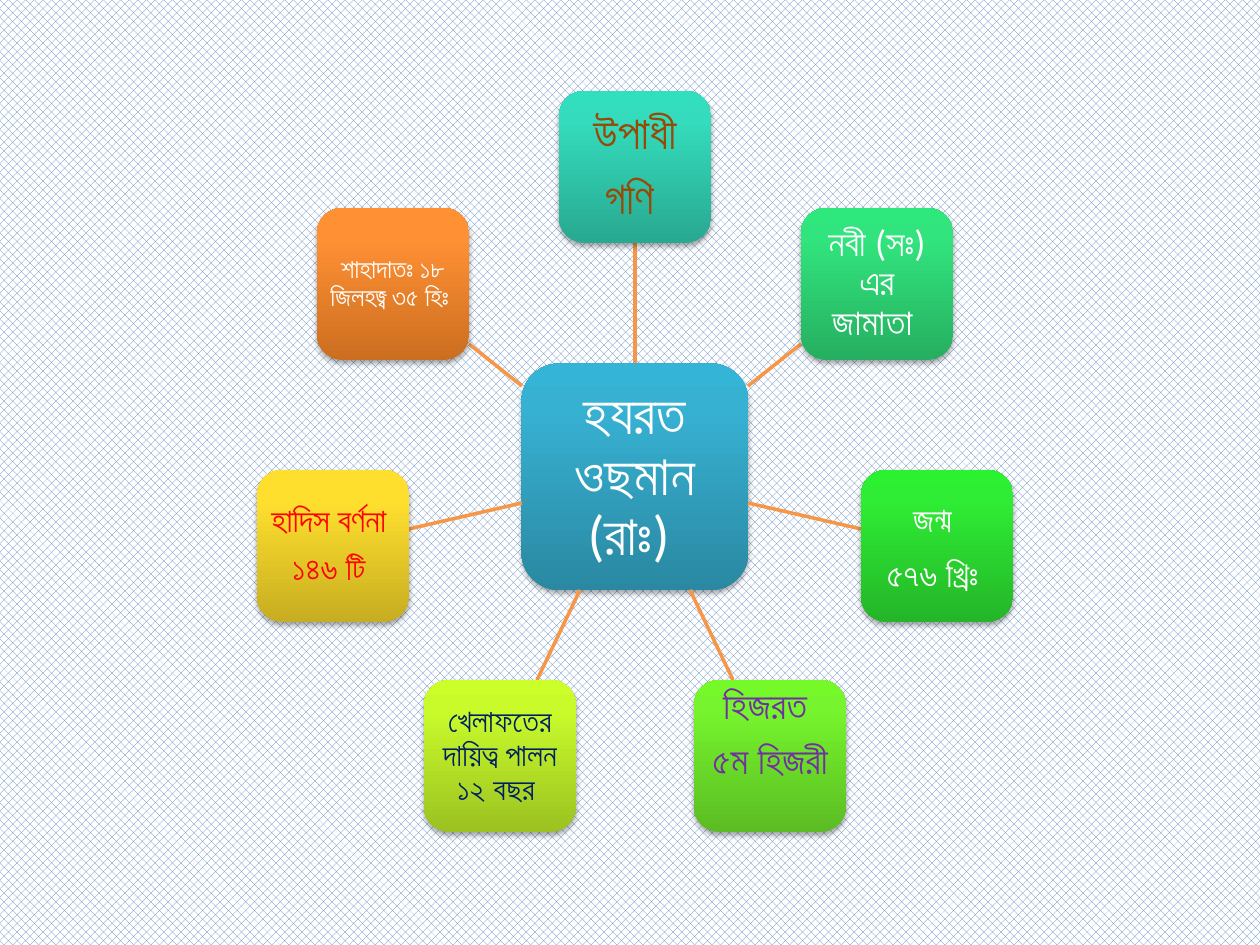
from copy import deepcopy
from math import cos, pi, sin
from typing import NamedTuple

from lxml import etree
from pptx import Presentation
from pptx.dml.color import RGBColor
from pptx.enum.dml import MSO_PATTERN
from pptx.enum.shapes import MSO_CONNECTOR, MSO_SHAPE
from pptx.enum.text import MSO_ANCHOR, PP_ALIGN
from pptx.oxml.ns import qn
from pptx.util import Pt

ROUNDED = MSO_SHAPE.ROUNDED_RECTANGLE
STRAIGHT = MSO_CONNECTOR.STRAIGHT
CENTER = PP_ALIGN.CENTER
MIDDLE = MSO_ANCHOR.MIDDLE
HALF_TONE = MSO_PATTERN.PERCENT_50
TOP_SIDE, BOTTOM_SIDE = 0, 2

WHITE = RGBColor(0xFF, 0xFF, 0xFF)
BLACK = RGBColor(0x00, 0x00, 0x00)
BLUE = RGBColor(0x4F, 0x81, 0xBD)
ORANGE = RGBColor(0xF7, 0x96, 0x46)
BROWN = RGBColor(0x98, 0x48, 0x07)
PURPLE = RGBColor(0x70, 0x30, 0xA0)
NAVY = RGBColor(0x00, 0x20, 0x60)
RED = RGBColor(0xFF, 0x00, 0x00)

SKY_SHADES = RGBColor(0x2A, 0x88, 0xA2), RGBColor(0x37, 0xB1, 0xD2), RGBColor(0x34, 0xB4, 0xD6)
TEAL_SHADES = RGBColor(0x28, 0xA9, 0x91), RGBColor(0x34, 0xDB, 0xBC), RGBColor(0x31, 0xDF, 0xBF)
MINT_SHADES = RGBColor(0x26, 0xAF, 0x60), RGBColor(0x31, 0xE4, 0x7D), RGBColor(0x2E, 0xE8, 0x7D)
GREEN_SHADES = RGBColor(0x24, 0xB6, 0x28), RGBColor(0x2F, 0xEC, 0x34), RGBColor(0x2B, 0xF1, 0x31)
LEAF_SHADES = RGBColor(0x5B, 0xBC, 0x23), RGBColor(0x76, 0xF4, 0x2D), RGBColor(0x75, 0xF9, 0x29)
LIME_SHADES = RGBColor(0x9B, 0xC2, 0x21), RGBColor(0xC9, 0xFB, 0x2B), RGBColor(0xCC, 0xFF, 0x29)
YELLOW_SHADES = RGBColor(0xC7, 0xAD, 0x21), RGBColor(0xFF, 0xDF, 0x2E), RGBColor(0xFF, 0xDF, 0x2F)
AMBER_SHADES = RGBColor(0xCC, 0x6E, 0x20), RGBColor(0xFF, 0x90, 0x34), RGBColor(0xFF, 0x91, 0x36)
SHADE_POSITIONS = 0, 0.8, 1

FONT = "Calibri"
PX_PER_INCH = 126
HUB_X, HUB_Y = 635, 477
HUB_SIZE, FACT_SIZE = 227, 152
RADIUS = 310


class Fact(NamedTuple):
    lines: list
    size: int
    color: RGBColor
    shades: tuple
    inset: int
    line_spacing: float = 0.9
    lift: int = 0


HUB = Fact(["হযরত ওছমান (রাঃ) "], 32, WHITE, SKY_SHADES, 11)
FACTS = [
    Fact(["উপাধী", "গণি "], 26, BROWN, TEAL_SHADES, 9),
    Fact(["নবী (সঃ) এর জামাতা "], 21, WHITE, MINT_SHADES, 8),
    Fact(["জন্ম ", "৫৭৬ খ্রিঃ "], 20, WHITE, GREEN_SHADES, 8, line_spacing=1.0),
    Fact(["হিজরত ", "৫ম হিজরী"], 22, PURPLE, LEAF_SHADES, 8, lift=42),
    Fact(["খেলাফতের দায়িত্ব পালন ১২ বছর "], 18, NAVY, LIME_SHADES, 6),
    Fact(["হাদিস বর্ণনা ", "১৪৬ টি "], 19, RED, YELLOW_SHADES, 6),
    Fact(["শাহাদাতঃ ১৮ জিলহজ্ব ৩৫ হিঃ "], 15, WHITE, AMBER_SHADES, 5),
]


def px(length):
    return round(length * 914400 / PX_PER_INCH)


def write_text(frame, lines, *, size, color, inset, line_spacing, lift):
    frame.word_wrap = True
    frame.vertical_anchor = MIDDLE
    frame.margin_left = frame.margin_right = frame.margin_top = px(inset)
    frame.margin_bottom = px(inset + lift)
    for index, line in enumerate(lines):
        paragraph = frame.add_paragraph() if index else frame.paragraphs[0]
        paragraph.alignment = CENTER
        paragraph.line_spacing = line_spacing
        paragraph.space_after = Pt(round(size * 0.35, 1))
        run = paragraph.add_run()
        run.text = line
        run.font.name = FONT
        run.font.size = Pt(size)
        run.font.color.rgb = color


def shade(tile, shades):
    tile.fill.gradient()
    tile.fill.gradient_angle = 90
    stop_list = tile.fill._xPr.find(qn("a:gradFill")).find(qn("a:gsLst"))
    stop_list.append(deepcopy(stop_list[-1]))
    for stop, position, color in zip(tile.fill.gradient_stops, SHADE_POSITIONS, shades):
        stop.position = position
        stop.color.rgb = color


def cast_shadow(tile):
    tile.shadow.inherit = False
    effects = tile._element.spPr.find(qn("a:effectLst"))
    shadow = etree.SubElement(effects, qn("a:outerShdw"), blurRad=str(Pt(3.1)),
                              dist=str(Pt(1.8)), dir="5400000", rotWithShape="0")
    tint = etree.SubElement(shadow, qn("a:srgbClr"), val=str(BLACK))
    etree.SubElement(tint, qn("a:alpha"), val="35000")


def add_tile(slide, fact, center_x, center_y, side):
    tile = slide.shapes.add_shape(ROUNDED, px(center_x - side / 2), px(center_y - side / 2),
                                  px(side), px(side))
    shade(tile, fact.shades)
    tile.line.fill.background()
    cast_shadow(tile)
    write_text(tile.text_frame, fact.lines, size=fact.size, color=fact.color,
               inset=fact.inset, line_spacing=fact.line_spacing, lift=fact.lift)
    return tile


def add_spoke(slide, start, end):
    spoke = slide.shapes.add_connector(STRAIGHT, *map(px, start + end))
    spoke.line.color.rgb = ORANGE
    spoke.line.width = Pt(2)
    etree.SubElement(spoke._element.spPr, qn("a:effectLst"))
    return spoke


def add_radial(slide):
    hub = add_tile(slide, HUB, HUB_X, HUB_Y, HUB_SIZE)
    for index, fact in enumerate(FACTS):
        angle = 2 * pi * index / len(FACTS)
        across, down = sin(angle), -cos(angle)
        edge = 0.5 / max(abs(across), abs(down))
        reach_out = HUB_SIZE * edge
        reach_in = RADIUS - FACT_SIZE * edge
        start, middle, end = ((round(HUB_X + across * reach), round(HUB_Y + down * reach))
                              for reach in (reach_out, RADIUS, reach_in))
        spoke = add_spoke(slide, start, end)
        tile = add_tile(slide, fact, *middle, FACT_SIZE)
        if index == 0:
            spoke.begin_connect(hub, TOP_SIDE)
            spoke.end_connect(tile, BOTTOM_SIDE)


def paint_background(slide):
    fill = slide.background.fill
    fill.patterned()
    fill.pattern = HALF_TONE
    fill.fore_color.rgb = BLUE
    fill.back_color.rgb = WHITE


def main():
    deck = Presentation()
    deck.slide_width, deck.slide_height = px(1260), px(945)
    slide = deck.slides.add_slide(deck.slide_layouts[6])
    paint_background(slide)
    add_radial(slide)
    deck.save("out.pptx")


if __name__ == "__main__":
    main()
